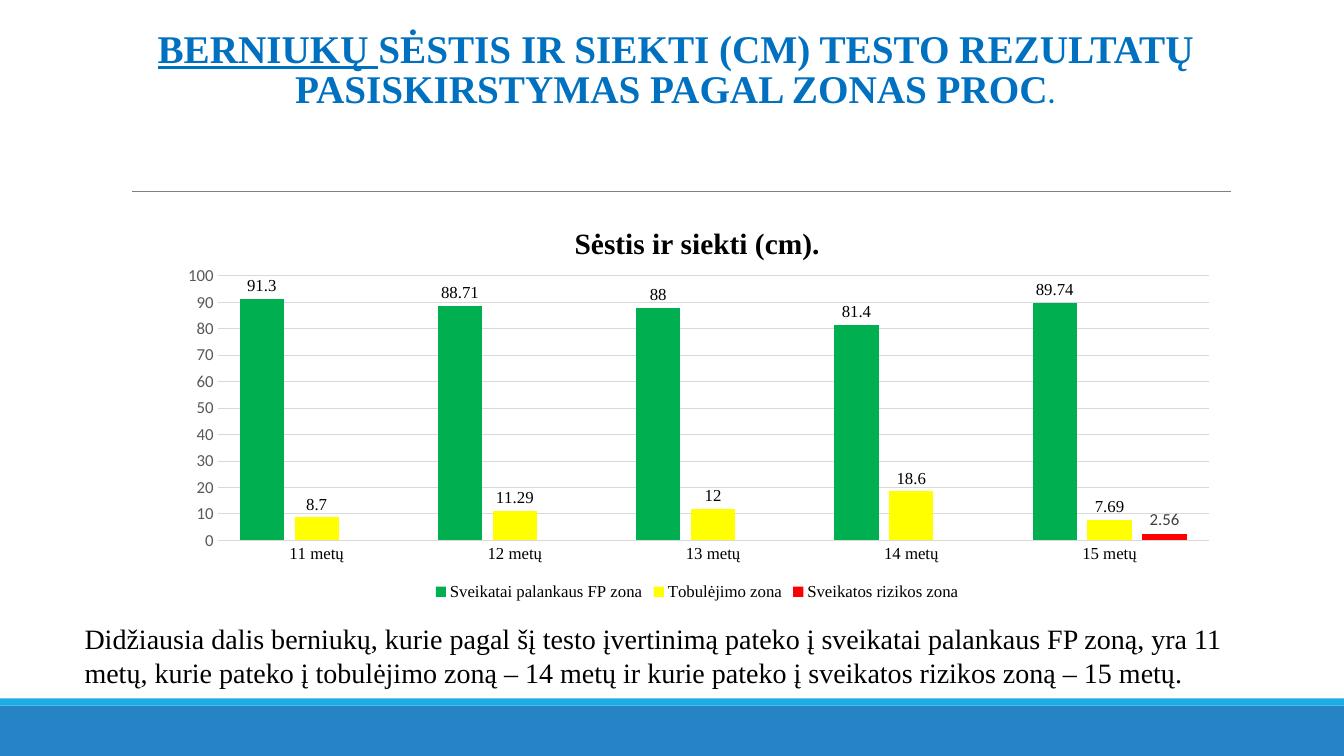
from dataclasses import dataclass

from lxml.etree import SubElement
from pptx import Presentation
from pptx.chart.data import CategoryChartData
from pptx.dml.color import RGBColor
from pptx.enum.chart import XL_CHART_TYPE as ChartType, XL_LABEL_POSITION as LabelPos
from pptx.enum.chart import XL_LEGEND_POSITION as LegendPos, XL_TICK_MARK as Tick
from pptx.enum.shapes import MSO_CONNECTOR as Connector, MSO_SHAPE as Shape
from pptx.enum.text import PP_ALIGN as Align
from pptx.oxml import parse_xml
from pptx.oxml.ns import nsdecls, qn
from pptx.util import Inches, Pt


@dataclass(frozen=True)
class Theme:
    serif: str = "Times New Roman"
    sans: str = "Calibri"
    heading: str = "0070C0"
    text: str = "000000"
    axis_text: str = "595959"
    soft_text: str = "404040"
    grid: str = "D9D9D9"
    rule: str = "808080"
    band: str = "2683C6"
    stripe: str = "1CADE4"
    good: str = "00B050"
    improving: str = "FFFF00"
    risk: str = "FF0000"
    heading_size: int = 28
    period_size: int = 24
    chart_title_size: int = 21
    body_size: int = 20
    label_size: int = 12


def rgb(value):
    return RGBColor.from_string(value)


def set_font(font, name, size, color, bold=None):
    font.name, font.size, font.bold = name, Pt(size), bold
    font.color.rgb = rgb(color)


def place(element, before, **position):
    """Give a chart part a fixed position, as fractions of the chart."""
    for old in element.findall(qn("c:layout")):
        element.remove(old)
    target = '<c:layoutTarget val="inner"/>' if "w" in position else ""
    modes = "".join(f'<c:{k}Mode val="edge"/>' for k in "xy")
    values = "".join(f'<c:{k} val="{v}"/>' for k, v in position.items())
    layout = parse_xml(f'<c:layout {nsdecls("c")}><c:manualLayout>{target}{modes}'
                       f'{values}</c:manualLayout></c:layout>')
    element.find(qn(before)).addprevious(layout)


class SlideBuilder:
    def __init__(self, slide, theme):
        self.shapes, self.theme = slide.shapes, theme

    def bar(self, left, top, width, height, color):
        bar = self.shapes.add_shape(Shape.RECTANGLE, *map(Inches, (left, top, width, height)))
        bar.shadow.inherit = False
        bar.fill.solid()
        bar.fill.fore_color.rgb = rgb(color)
        bar.line.fill.background()

    def rule(self, left, right, y):
        rule = self.shapes.add_connector(Connector.STRAIGHT, *map(Inches, (left, y, right, y)))
        rule.line.color.rgb = rgb(self.theme.rule)
        rule.line.width = Pt(0.5)
        SubElement(rule._element.spPr, qn("a:effectLst"))

    def text_box(self, left, top, width, height):
        frame = self.shapes.add_textbox(*map(Inches, (left, top, width, height))).text_frame
        frame.word_wrap = True
        return frame

    def heading(self, underlined, main, ending):
        theme = self.theme
        frame = self.text_box(1.2, 0.31, 11, 1.59)
        frame.margin_top = 0
        line = frame.paragraphs[0]
        line.alignment, line.line_spacing = Align.CENTER, 0.85
        set_font(line.font, theme.serif, theme.heading_size, theme.heading, True)
        for words in (underlined, main, ending):
            run = line.add_run()
            run.text = words
            set_font(run.font, theme.serif, theme.heading_size, theme.heading, True)
        line.runs[0].font.underline = True
        set_font(line.runs[-1].font, theme.sans, theme.period_size, theme.heading, False)

    def body(self, words):
        theme = self.theme
        paragraph = self.text_box(0.74, 6.12, 12.13, 0.77).paragraphs[0]
        run = paragraph.add_run()
        run.text = words
        set_font(paragraph.font, theme.serif, theme.body_size, theme.text)
        set_font(run.font, theme.serif, theme.body_size, theme.text)

    def column_chart(self, title, ages, zones):
        theme = self.theme
        data = CategoryChartData()
        data.categories = ages
        for name, values, *_ in zones:
            data.add_series(name, values)
        chart = self.shapes.add_chart(ChartType.COLUMN_CLUSTERED, Inches(1.63), Inches(2.02),
                                      Inches(10.57), Inches(3.98), data).chart
        set_font(chart.font, theme.sans, 10, theme.text)

        # Title and legend
        chart.has_title = True
        heading = chart.chart_title.text_frame.paragraphs[0]
        run = heading.add_run()
        run.text = title
        set_font(run.font, theme.serif, theme.chart_title_size, theme.text, True)
        place(chart.chart_title._element, "c:overlay", x=0.38, y=0.04)
        chart.has_legend = True
        chart.legend.position = LegendPos.BOTTOM
        chart.legend.include_in_layout = False
        set_font(chart.legend.font, theme.serif, theme.label_size, theme.text)

        # Axes
        ages_axis, percent_axis = chart.category_axis, chart.value_axis
        for axis in (ages_axis, percent_axis):
            axis.major_tick_mark = axis.minor_tick_mark = Tick.NONE
        set_font(ages_axis.tick_labels.font, theme.serif, theme.label_size, theme.text)
        ages_axis.format.line.color.rgb = rgb(theme.grid)
        ages_axis.format.line.width = Pt(1)
        set_font(percent_axis.tick_labels.font, theme.sans, theme.label_size, theme.axis_text)
        percent_axis.format.line.fill.background()
        percent_axis.minimum_scale, percent_axis.maximum_scale = 0, 100
        percent_axis.major_unit = 10
        percent_axis.major_gridlines.format.line.color.rgb = rgb(theme.grid)
        percent_axis.major_gridlines.format.line.width = Pt(0.75)

        # Columns and their labels
        plot = chart.plots[0]
        plot.gap_width, plot.overlap, plot.vary_by_categories = 100, -24, False
        place(plot._element.getparent(), "c:barChart", x=0.05, y=0.18, w=0.93, h=0.66)
        for series, (_, _, fill, label_font, label_color) in zip(plot.series, zones):
            series.format.fill.solid()
            series.format.fill.fore_color.rgb = rgb(fill)
            labels = series.data_labels
            labels.show_value, labels.position = True, LabelPos.OUTSIDE_END
            set_font(labels.font, label_font, theme.label_size, label_color)


def main():
    deck = Presentation()
    deck.slide_width, deck.slide_height = Inches(13.33), Inches(7.5)
    theme = Theme()
    page = SlideBuilder(deck.slides.add_slide(deck.slide_layouts[6]), theme)

    # Footer bands and rule under the heading
    page.bar(0, 7, 13.33, 0.5, theme.band)
    page.bar(0, 6.93, 13.33, 0.07, theme.stripe)
    page.rule(1.31, 12.21, 1.9)

    # Heading
    page.heading("BERNIUKŲ ",
                 "SĖSTIS IR SIEKTI (CM) TESTO REZULTATŲ PASISKIRSTYMAS PAGAL ZONAS PROC", ".")

    # Results by age and zone
    page.column_chart(
        "Sėstis ir siekti (cm).",
        [f"{age} metų" for age in range(11, 16)],
        [("Sveikatai palankaus FP zona", (91.3, 88.71, 88, 81.4, 89.74),
          theme.good, theme.serif, theme.text),
         ("Tobulėjimo zona", (8.7, 11.29, 12, 18.6, 7.69),
          theme.improving, theme.serif, theme.text),
         ("Sveikatos rizikos zona", (None, None, None, None, 2.56),
          theme.risk, theme.sans, theme.soft_text)])

    # Conclusion
    page.body("Didžiausia dalis berniukų, kurie pagal šį testo įvertinimą pateko į sveikatai "
              "palankaus FP zoną, yra 11 metų, kurie pateko į tobulėjimo zoną – 14 metų ir "
              "kurie pateko į sveikatos rizikos zoną – 15 metų.")

    deck.save("out.pptx")


if __name__ == "__main__":
    main()
